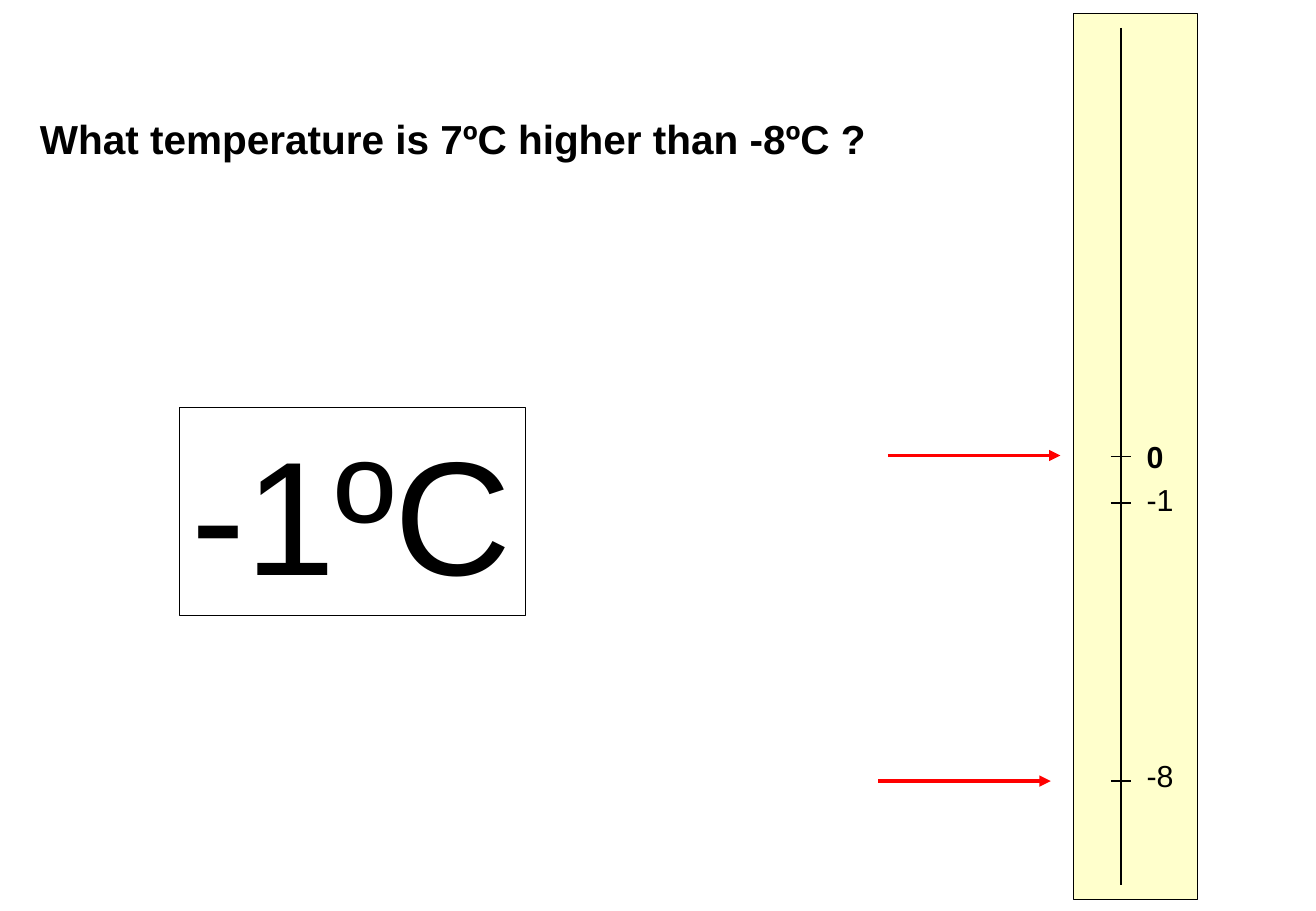
from dataclasses import dataclass

from pptx import Presentation
from pptx.dml.color import RGBColor
from pptx.enum import shapes, text
from pptx.oxml import ns, xmlchemy
from pptx.util import Pt


@dataclass(frozen=True)
class Theme:
    font: str = "Arial"
    ink: RGBColor = RGBColor(0, 0, 0)
    scale: RGBColor = RGBColor(0xFF, 0xFF, 0xCC)
    arrow: RGBColor = RGBColor(0xFF, 0, 0)
    thin: float = 0.75
    thick: float = 2.25
    title: int = 24
    label: int = 18
    answer: int = 96


@dataclass(frozen=True)
class Mark:
    words: str
    y: float
    top: float
    wide: float
    bold: bool = False


@dataclass(frozen=True)
class Arrow:
    x: float
    y: float


THEME = Theme()
AXIS = 664.5
MARKS = [
    Mark("0", 270.7, 256.3, 24.5, True),
    Mark("-1", 298.1, 281.5, 30.2),
    Mark("-8", 463, 445, 30.2),
]
ARROWS = [Arrow(520.6, 463), Arrow(526.3, 270)]
REACH = 102.2


def put_text(shape, words: str, size: int, bold: bool = False) -> None:
    frame = shape.text_frame
    frame.text = words
    frame.word_wrap = False
    frame.auto_size = text.MSO_AUTO_SIZE.NONE
    frame.vertical_anchor = text.MSO_ANCHOR.TOP
    par = frame.paragraphs[0]
    par.alignment = text.PP_ALIGN.LEFT
    font = par.runs[0].font
    font.name, font.size, font.bold = THEME.font, Pt(size), bold
    font.color.rgb = THEME.ink


def add_box(slide, x: float, y: float, w: float, h: float):
    box = slide.shapes.add_shape(
        shapes.MSO_SHAPE.RECTANGLE, Pt(x), Pt(y), Pt(w), Pt(h))
    box.shadow.inherit = False
    box.fill.background()
    box.line.color.rgb = THEME.ink
    box.line.width = Pt(THEME.thin)
    return box


def add_line(slide, x: float, y: float, x2: float, y2: float,
             color: RGBColor = THEME.ink, width: float = THEME.thin,
             head: bool = False) -> None:
    line = slide.shapes.add_connector(
        shapes.MSO_CONNECTOR.STRAIGHT, Pt(x), Pt(y), Pt(x2), Pt(y2))
    line.line.color.rgb = color
    line.line.width = Pt(width)
    props = line._element.spPr
    if head:
        tip = xmlchemy.OxmlElement("a:tailEnd")
        tip.set("type", "triangle")
        props.find(ns.qn("a:ln")).append(tip)
    props.append(xmlchemy.OxmlElement("a:effectLst"))


def main() -> None:
    deck = Presentation()
    deck.slide_width, deck.slide_height = Pt(780), Pt(540)
    slide = deck.slides.add_slide(deck.slide_layouts.get_by_name("Title Only"))

    # Question
    title = slide.shapes.title
    title.left, title.top = Pt(16.5), Pt(64.1)
    title.width, title.height = Pt(504), Pt(36)
    put_text(title, "What temperature is 7ºC higher than -8ºC ?",
             THEME.title, True)

    # Thermometer scale
    scale = add_box(slide, 636.3, 8, 73.5, 525)
    scale.fill.solid()
    scale.fill.fore_color.rgb = THEME.scale
    add_line(slide, AXIS, 16.6, AXIS, 524.6)
    for mark in MARKS:
        add_line(slide, AXIS - 6, mark.y, AXIS + 6, mark.y)
        label = slide.shapes.add_textbox(
            Pt(672.5), Pt(mark.top), Pt(mark.wide), Pt(29))
        put_text(label, mark.words, THEME.label, mark.bold)

    # Pointers to the scale
    for arrow in ARROWS:
        add_line(slide, arrow.x, arrow.y, arrow.x + REACH, arrow.y,
                 THEME.arrow, THEME.thick, True)

    # Answer
    answer = add_box(slide, 106.6, 241.6, 205, 123.2)
    put_text(answer, "-1ºC", THEME.answer)

    deck.save("out.pptx")


if __name__ == "__main__":
    main()
